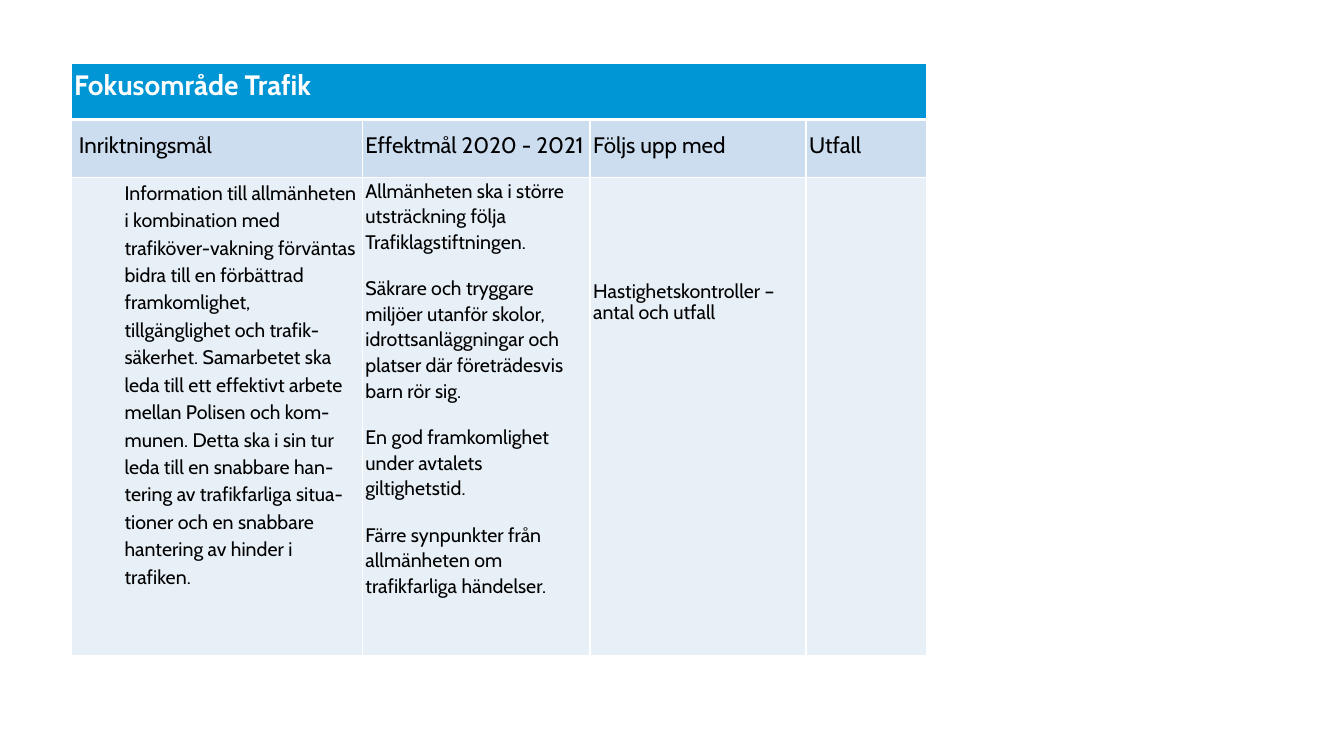
"""Builds the goal table for the focus area Trafik."""
from dataclasses import dataclass

from lxml import etree
from pptx import Presentation
from pptx import util as u
from pptx.dml.color import RGBColor
from pptx.enum import text
from pptx.oxml.ns import qn


@dataclass
class Theme:
    font: str = "Cabin"
    title_fill: str = "0096D6"
    head_fill: str = "CCDDF0"
    body_fill: str = "E7EFF7"
    white: str = "FFFFFF"
    black: str = "000000"
    title_size: int = 20
    head_size: int = 16
    body_size: int = 14


def style_cell(cell, fill, edges):
    """Sets insets, white edges (points by side) and fill of a cell."""
    cell.margin_left = cell.margin_right = u.Cm(0.08)
    cell.margin_top = cell.margin_bottom = 0
    tcPr = cell._tc.get_or_add_tcPr()
    for side, width in edges.items():
        ln = etree.SubElement(tcPr, qn("a:ln" + side), w=str(u.Pt(width)))
        solid = etree.SubElement(ln, qn("a:solidFill"))
        etree.SubElement(solid, qn("a:srgbClr"), val=theme.white)
    cell.fill.solid()
    cell.fill.fore_color.rgb = RGBColor.from_string(fill)


def write_cell(cell, lines, size, color, spacing, indent=0, bold=False):
    """Writes one paragraph per line, 15 points apart."""
    tf = cell.text_frame
    for i, line in enumerate(lines):
        p = tf.paragraphs[0] if i == 0 else tf.add_paragraph()
        p._p.get_or_add_pPr().set("marL", str(u.Cm(indent)))
        p.line_spacing = spacing
        p.space_before = u.Pt(15 if i else 0)
        r = p.add_run()
        r.text = line
        r.font.name = theme.font
        r.font.size = u.Pt(size)
        r.font.bold = bold
        r.font.color.rgb = RGBColor.from_string(color)


theme = Theme()
fixed = u.Pt(15)
col_widths = [7.34, 5.74, 5.44, 3.05]
row_heights = [1.4, 1.47, 12.04]
fills = [theme.title_fill, theme.head_fill, theme.body_fill]
headings = ["Inriktningsmål", "Effektmål 2020 - 2021", "Följs upp med", "Utfall"]
direction = (
    "Information till allmänheten i kombination med trafiköver-vakning förväntas "
    "bidra till en förbättrad framkomlighet, tillgänglighet och trafik-säkerhet. "
    "Samarbetet ska leda till ett effektivt arbete mellan Polisen och kom-munen. "
    "Detta ska i sin tur leda till en snabbare han-tering av trafikfarliga "
    "situa-tioner och en snabbare hantering av hinder i trafiken."
)
effects = [
    "Allmänheten ska i större utsträckning följa Trafiklagstiftningen.",
    "Säkrare och tryggare miljöer utanför skolor, idrottsanläggningar och "
    "platser där företrädesvis barn rör sig.",
    "En god framkomlighet under avtalets giltighetstid.",
    "Färre synpunkter från allmänheten om trafikfarliga händelser.",
]

prs = Presentation()
prs.slide_width, prs.slide_height = u.Cm(33.87), u.Cm(19.05)
s = prs.slides.add_slide(prs.slide_layouts[6])
table = s.shapes.add_table(
    len(row_heights), len(col_widths), u.Cm(1.79), u.Cm(1.61),
    u.Cm(sum(col_widths)), u.Cm(sum(row_heights)),
).table
table.horz_banding = False
for column, width in zip(table.columns, col_widths):
    column.width = u.Cm(width)
for row, height in zip(table.rows, row_heights):
    row.height = u.Cm(height)

for i, fill in enumerate(fills):
    edges = {"L": 1, "R": 1, "T": 3 if i == 1 else 1, "B": 3 if i == 0 else 1}
    for cell in table.rows[i].cells:
        style_cell(cell, fill, edges)
        if i < 2:
            cell.vertical_anchor = text.MSO_ANCHOR.MIDDLE

title = table.cell(0, 0)
title.merge(table.cell(0, len(col_widths) - 1))
write_cell(title, ["Fokusområde Trafik"], theme.title_size, theme.white, fixed, bold=True)
for j, heading in enumerate(headings):
    write_cell(table.cell(1, j), [heading], theme.head_size, theme.black, fixed,
               indent=0 if j else 0.12)

write_cell(table.cell(2, 0), [direction], theme.body_size, theme.black, 1.15, indent=1.27)
write_cell(table.cell(2, 1), effects, theme.body_size, theme.black, 1.07)
follow_up = table.cell(2, 2)
follow_up.margin_top = 5 * fixed
write_cell(follow_up, ["Hastighetskontroller – antal och utfall"],
           theme.body_size, theme.black, fixed)

prs.save("out.pptx")
